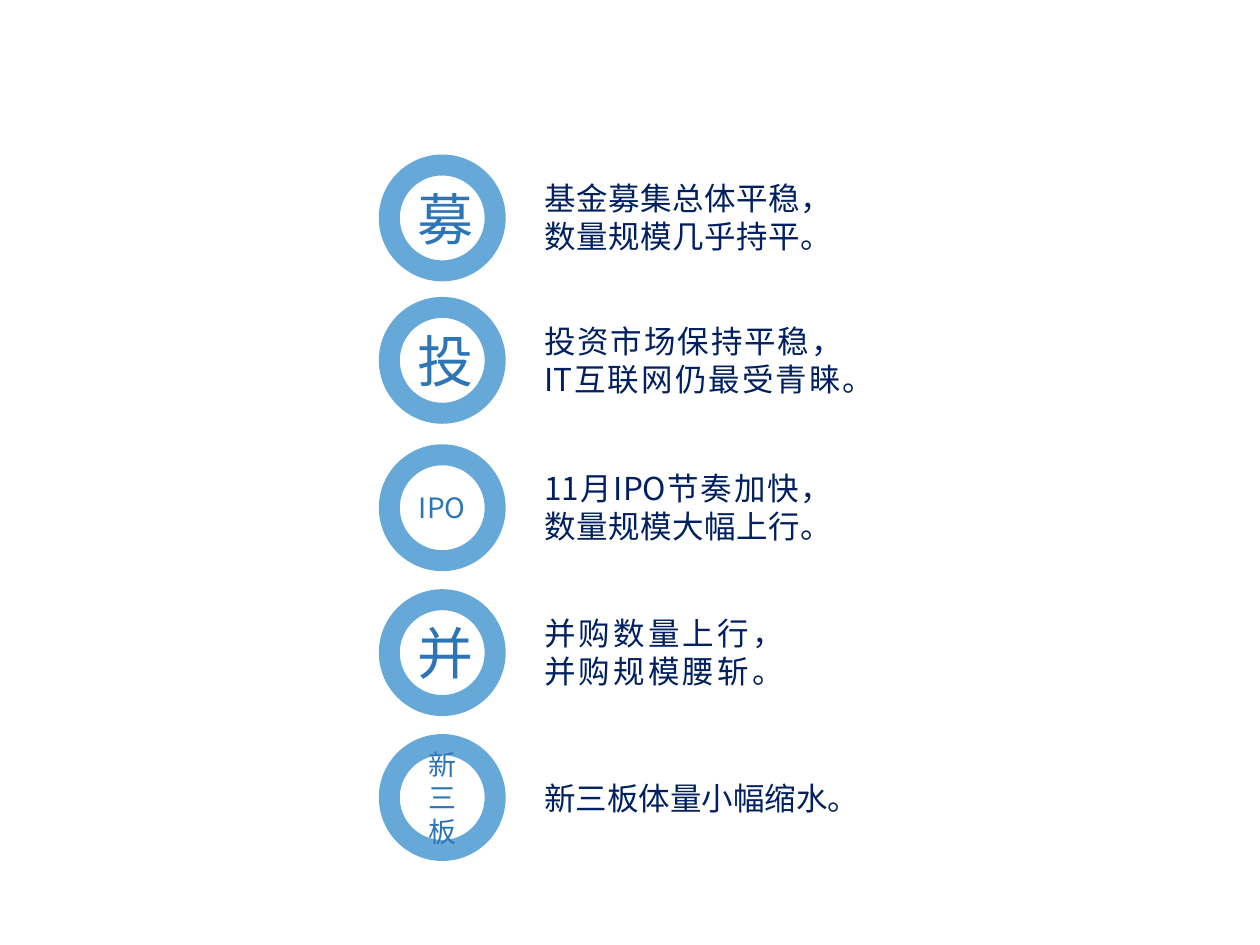
from lxml import etree
from pptx import Presentation
from pptx.dml.color import RGBColor
from pptx.enum.shapes import MSO_SHAPE
from pptx.enum.text import MSO_ANCHOR, MSO_AUTO_SIZE, PP_ALIGN
from pptx.oxml.ns import qn
from pptx.util import Inches, Pt

RING_BLUE = RGBColor(0x00, 0x70, 0xC0)
LABEL_BLUE = RGBColor(0x2E, 0x75, 0xB6)
NAVY = RGBColor(0x00, 0x20, 0x60)

RING_LEFT, RING_SIZE, NOTE_LEFT = 3.09, 0.84, 4.22
LABEL_FONT, NOTE_FONT = "Noto Sans CJK JP", "Noto Sans CJK SC"

# Ring centre, label, label size, note width, note height, note paragraphs
TOPICS = [
    (1.73, "募", 32, 2.23, 0.71, ["基金募集总体平稳，", "数量规模几乎持平。"]),
    (2.86, "投", 32, 2.57, 0.71, ["投资市场保持平稳，IT互联网仍最受青睐。"]),
    (4.03, "IPO", 16, 2.23, 0.71, ["11月IPO节奏加快，", "数量规模大幅上行。"]),
    (5.18, "并", 32, 1.85, 0.71, ["并购数量上行，", "并购规模腰斩。"]),
    (6.33, "新三板", 16, 2.95, 0.4, ["新三板体量小幅缩水。"]),
]


def write(frame, paragraphs, align, typeface, size, color):
    font_format = {"name": typeface, "size": Pt(size)}
    for index, text in enumerate(paragraphs):
        paragraph = frame.paragraphs[0] if index == 0 else frame.add_paragraph()
        paragraph.alignment = align
        run = paragraph.add_run()
        run.text = text
        for key, value in font_format.items():
            setattr(run.font, key, value)
        run.font.color.rgb = color
        # Chinese characters take the East Asian typeface
        east_asian = etree.SubElement(run.font._element, qn("a:ea"))
        east_asian.set("typeface", typeface)


prs = Presentation()
prs.slide_width, prs.slide_height = Inches(10), Inches(7.5)
slide = prs.slides.add_slide(prs.slide_layouts[6])

for center, label, label_size, note_width, note_height, note_lines in TOPICS:
    # Ring with a translucent outline and its label
    ring = slide.shapes.add_shape(
        MSO_SHAPE.OVAL, Inches(RING_LEFT), Inches(center - RING_SIZE / 2),
        Inches(RING_SIZE), Inches(RING_SIZE))
    ring.shadow.inherit = False
    ring.fill.background()
    ring.line.width = Pt(12)
    ring.line.color.rgb = RING_BLUE
    outline_color = ring.line._ln.find(".//" + qn("a:srgbClr"))
    etree.SubElement(outline_color, qn("a:alpha")).set("val", "60000")
    ring.text_frame.vertical_anchor = MSO_ANCHOR.MIDDLE
    write(ring.text_frame, [label], PP_ALIGN.CENTER, LABEL_FONT, label_size, LABEL_BLUE)

    # Note beside the ring, centred on it
    note = slide.shapes.add_textbox(
        Inches(NOTE_LEFT), Inches(center - note_height / 2),
        Inches(note_width), Inches(note_height))
    note_format = {"word_wrap": True, "auto_size": MSO_AUTO_SIZE.SHAPE_TO_FIT_TEXT}
    for key, value in note_format.items():
        setattr(note.text_frame, key, value)
    write(note.text_frame, note_lines, PP_ALIGN.JUSTIFY, NOTE_FONT, 18, NAVY)

prs.save("out.pptx")
